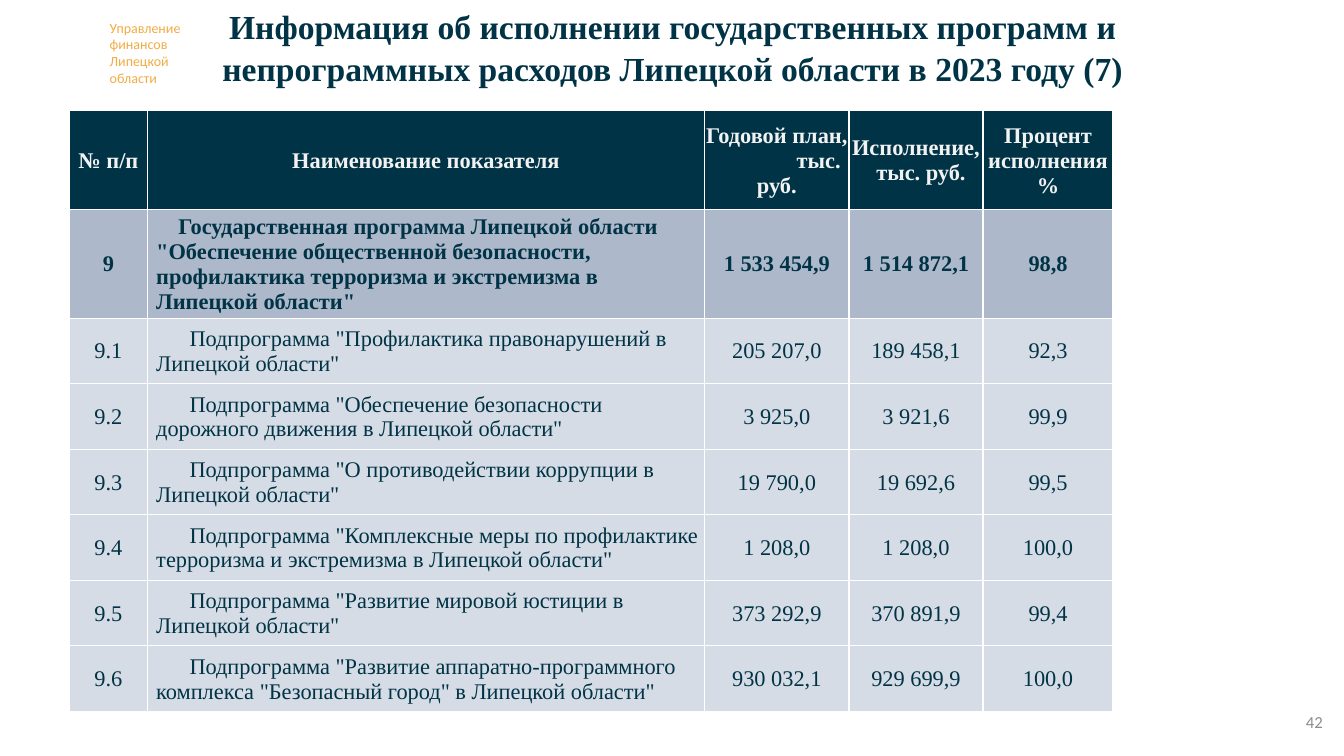
from pptx import Presentation
from pptx.util import Inches, Pt
from pptx.dml.color import RGBColor
from pptx.enum.text import PP_ALIGN, MSO_ANCHOR, MSO_AUTO_SIZE
from pptx.oxml import parse_xml
from pptx.oxml.ns import nsdecls

# Content
TITLE = ("Информация об исполнении государственных программ и\v"
         "непрограммных расходов Липецкой области в 2023 году (7)")
OFFICE = "Управление финансов Липецкой области"
PAGE = "42"
HEAD = ("№ п/п", "Наименование показателя", "Годовой план,\nтыс.\nруб.",
        "Исполнение,\nтыс. руб.", "Процент исполнения %")
ROWS = [
    ("9", 'Государственная программа Липецкой области "Обеспечение общественной '
     'безопасности, профилактика терроризма и экстремизма в Липецкой области"',
     "1 533 454,9", "1 514 872,1", "98,8"),
    ("9.1", 'Подпрограмма "Профилактика правонарушений в Липецкой области"',
     "205 207,0", "189 458,1", "92,3"),
    ("9.2", 'Подпрограмма "Обеспечение безопасности дорожного движения в Липецкой области"',
     "3 925,0", "3 921,6", "99,9"),
    ("9.3", 'Подпрограмма "О противодействии коррупции в Липецкой области"',
     "19 790,0", "19 692,6", "99,5"),
    ("9.4", 'Подпрограмма "Комплексные меры по профилактике терроризма и экстремизма '
     'в Липецкой области"', "1 208,0", "1 208,0", "100,0"),
    ("9.5", 'Подпрограмма "Развитие мировой юстиции в Липецкой области"',
     "373 292,9", "370 891,9", "99,4"),
    ("9.6", 'Подпрограмма "Развитие аппаратно-программного комплекса "Безопасный город" '
     'в Липецкой области"', "930 032,1", "929 699,9", "100,0"),
]
WIDTHS = (0.77, 5.53, 1.43, 1.33, 1.29)
HEIGHTS = (0.98, 0.98) + (0.65,) * 6
# Left margins of single header lines: (column, line)
SHIFTS = {(2, 1): 0.83, (3, 1): 0.1}


class Theme:
    serif, sans = "Times New Roman", "Calibri"
    navy, pale, gold, gray = "003345", "F2F2F2", "F2AC44", "8C8C8C"
    group, plain, rule = "ADB9CA", "D6DCE5", "FFFFFF"
    title, body, page, small = 24, 16, 12, 10


def style(par, face, size, color, bold=False, align=PP_ALIGN.LEFT):
    par.alignment = align
    for run in par.runs:
        font = run.font
        font.name, font.size, font.bold = face, Pt(size), bold
        font.color.rgb = RGBColor.from_string(color)


def label(slide, place, text, size, color, align=PP_ALIGN.LEFT, anchor=MSO_ANCHOR.TOP):
    frame = slide.shapes.add_textbox(*map(Inches, place)).text_frame
    frame.word_wrap = True
    frame.vertical_anchor = anchor
    frame.text = text
    style(frame.paragraphs[0], Theme.sans, size, color, align=align)


def border(cell):
    props = cell._tc.get_or_add_tcPr()
    for side in "LRTB":
        props.append(parse_xml(
            f'<a:ln{side} w="{Pt(1)}" {nsdecls("a")}><a:solidFill>'
            f'<a:srgbClr val="{Theme.rule}"/></a:solidFill></a:ln{side}>'))


def fill_cell(cell, row, col, text):
    border(cell)
    name = row > 0 and col == 1
    back = (Theme.navy, Theme.group)[row] if row < 2 else Theme.plain
    cell.fill.solid()
    cell.fill.fore_color.rgb = RGBColor.from_string(back)
    cell.vertical_anchor = MSO_ANCHOR.MIDDLE
    cell.margin_left = Inches(0.09 if name else 0.01)
    cell.margin_right = cell.margin_top = Inches(0.01)
    cell.margin_bottom = 0
    cell.text_frame.text = text
    for line, par in enumerate(cell.text_frame.paragraphs):
        style(par, Theme.serif, Theme.body, Theme.navy if row else Theme.pale,
              row < 2, PP_ALIGN.LEFT if name else PP_ALIGN.CENTER)
        props = par._p.get_or_add_pPr()
        if name:
            props.set("indent", str(Inches(0.22 if row == 1 else 0.33)))
        elif row == 0 and (col, line) in SHIFTS:
            props.set("marL", str(Inches(SHIFTS[col, line])))


def main():
    deck = Presentation()
    deck.slide_width, deck.slide_height = Inches(13.33), Inches(7.5)
    slide = deck.slides.add_slide(deck.slide_layouts[5])

    # Office name and title
    label(slide, (0.99, 0.14, 0.97, 0.77), OFFICE, Theme.small, Theme.gold)
    title = slide.shapes.title
    title.left, title.top, title.width, title.height = map(
        Inches, (0.8, -0.12, 11.74, 0.97))
    frame = title.text_frame
    frame.auto_size = MSO_AUTO_SIZE.NONE
    frame.vertical_anchor = MSO_ANCHOR.MIDDLE
    frame.margin_top = Inches(0.23)
    frame.text = TITLE
    head = frame.paragraphs[0]
    head.line_spacing = Pt(30)
    style(head, Theme.serif, Theme.title, Theme.navy, True, PP_ALIGN.CENTER)

    # Page number
    label(slide, (10.11, 6.96, 3.11, 0.4), PAGE, Theme.page, Theme.gray,
          PP_ALIGN.RIGHT, MSO_ANCHOR.MIDDLE)

    # Budget table
    data = [HEAD] + ROWS
    table = slide.shapes.add_table(
        len(data), len(HEAD), Inches(0.69), Inches(1.1),
        Inches(sum(WIDTHS)), Inches(sum(HEIGHTS))).table
    table.horz_banding = False
    for col, width in zip(table.columns, WIDTHS):
        col.width = Inches(width)
    for row, height in zip(table.rows, HEIGHTS):
        row.height = Inches(height)
    for i, texts in enumerate(data):
        for j, text in enumerate(texts):
            fill_cell(table.cell(i, j), i, j, text)

    deck.save("out.pptx")


if __name__ == "__main__":
    main()
